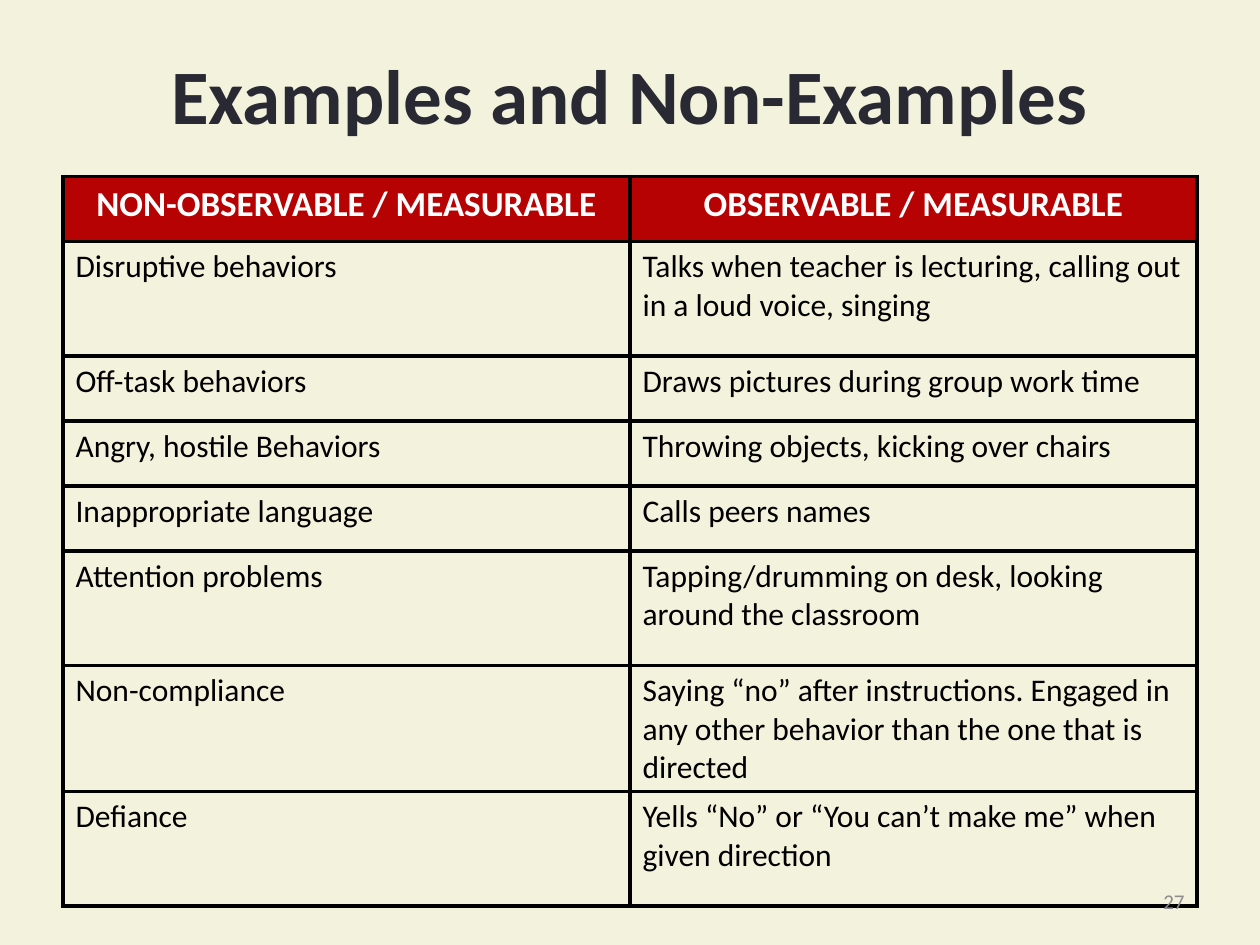
from pptx import Presentation
from pptx.dml.color import RGBColor
from pptx.enum import text
from pptx.oxml import parse_xml
from pptx.oxml.ns import nsdecls
from pptx.util import Pt

FONT = "Calibri"
CREAM = RGBColor(0xF3, 0xF2, 0xDC)
SLATE = RGBColor(0x29, 0x29, 0x34)
RED = RGBColor(0xB6, 0x02, 0x02)
WHITE = RGBColor(0xFF, 0xFF, 0xFF)
BLACK = RGBColor(0, 0, 0)
GREY = RGBColor(0x8D, 0x8D, 0x8F)

BORDER_WIDTH = Pt(2.25)
SHORT, TALL, TALLEST = 37.2, 65.4, 72

# Row height, non-observable behavior, observable behavior
HEADER = (SHORT, "NON-OBSERVABLE / MEASURABLE", "OBSERVABLE / MEASURABLE")
EXAMPLES = [
    (TALL, "Disruptive behaviors",
     "Talks when teacher is lecturing, calling out in a loud voice, singing"),
    (SHORT, "Off-task behaviors", "Draws pictures during group work time"),
    (SHORT, "Angry, hostile Behaviors", "Throwing objects, kicking over chairs"),
    (SHORT, "Inappropriate language", "Calls peers names"),
    (TALL, "Attention problems",
     "Tapping/drumming on desk, looking around the classroom"),
    (TALLEST, "Non-compliance",
     "Saying “no” after instructions. Engaged in any other behavior "
     "than the one that is directed"),
    (TALL, "Defiance", "Yells “No” or “You can’t make me” when given direction"),
]


def write(text_frame, wording, size, color, bold=False, align=text.PP_ALIGN.LEFT):
    text_frame.text = wording
    text_frame.word_wrap = True
    paragraph = text_frame.paragraphs[0]
    paragraph.alignment = align
    font = paragraph.runs[0].font
    font.name, font.size, font.bold = FONT, Pt(size), bold
    font.color.rgb = color


def add_label(slide, box, wording, size, color, **style):
    """Vertically centred text in box (left, top, width, height)."""
    shape = slide.shapes.add_textbox(*map(Pt, box))
    write(shape.text_frame, wording, size, color, **style)
    shape.text_frame.vertical_anchor = text.MSO_ANCHOR.MIDDLE


def add_borders(cell):
    properties = cell._tc.get_or_add_tcPr()
    for side in ("lnL", "lnR", "lnT", "lnB"):
        properties.append(parse_xml(
            f'<a:{side} {nsdecls("a")} w="{BORDER_WIDTH}"><a:solidFill>'
            f'<a:srgbClr val="{BLACK}"/></a:solidFill></a:{side}>'))


def add_examples_table(slide, left, top, width):
    rows = [HEADER] + EXAMPLES
    height = sum(row[0] for row in rows)
    table = slide.shapes.add_table(
        len(rows), 2, Pt(left), Pt(top), Pt(width), Pt(height)).table
    table.horz_banding = False
    for column in table.columns:
        column.width = Pt(width / 2)
    for index, (row_height, *wordings) in enumerate(rows):
        table.rows[index].height = Pt(row_height)
        for cell, wording in zip(table.rows[index].cells, wordings):
            add_borders(cell)
            if index == 0:
                cell.fill.solid()
                cell.fill.fore_color.rgb = RED
                write(cell.text_frame, wording, 20, WHITE, bold=True,
                      align=text.PP_ALIGN.CENTER)
            else:
                cell.fill.background()
                write(cell.text_frame, wording, 18, BLACK)


def build_examples_slide(presentation):
    slide = presentation.slides.add_slide(presentation.slide_layouts[6])
    slide.background.fill.solid()
    slide.background.fill.fore_color.rgb = CREAM

    # Title
    add_label(slide, (36, 21.6, 648, 63.4), "Examples and Non-Examples", 44, SLATE,
              bold=True, align=text.PP_ALIGN.CENTER)
    # Comparison table
    add_examples_table(slide, left=36, top=100.8, width=648)
    # Page number
    add_label(slide, (516, 500.5, 168, 28.8), "27", 12, GREY,
              align=text.PP_ALIGN.RIGHT)


def main():
    presentation = Presentation()
    presentation.slide_width, presentation.slide_height = Pt(720), Pt(540)
    build_examples_slide(presentation)
    presentation.save("out.pptx")


if __name__ == "__main__":
    main()
